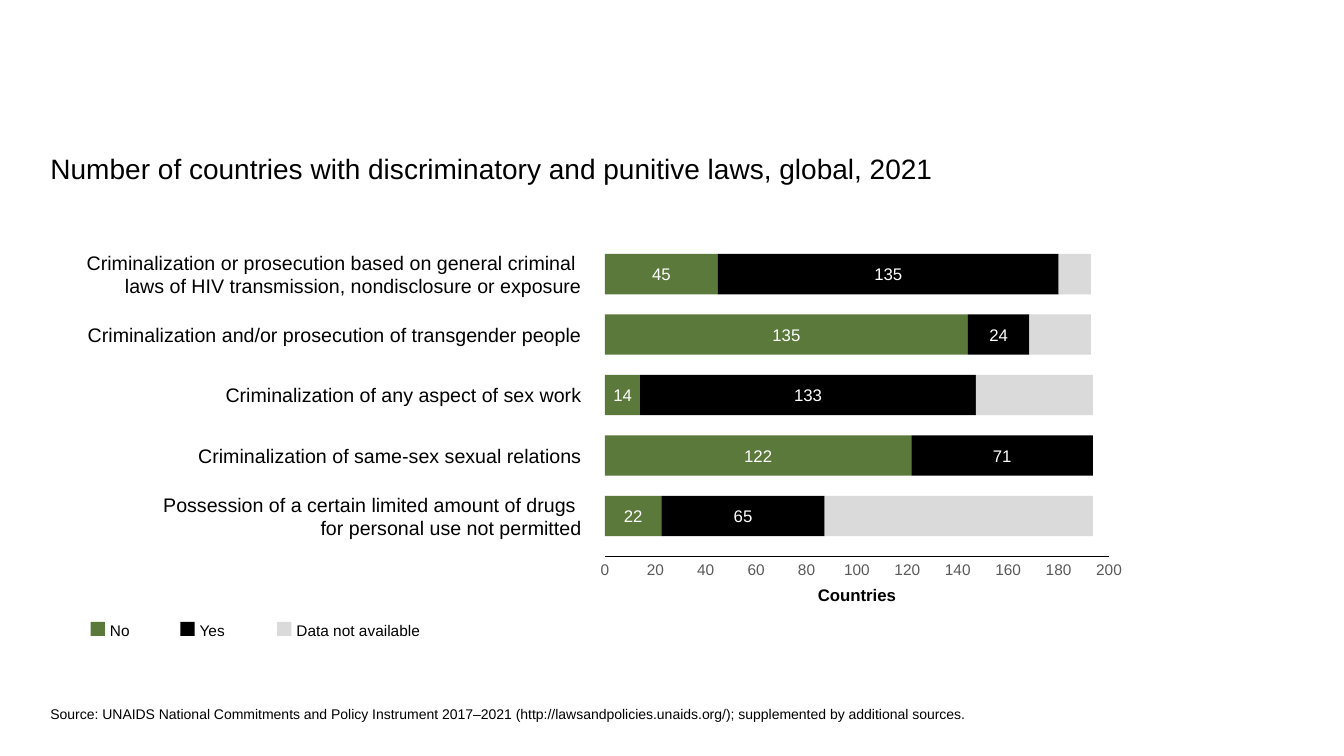
from lxml import etree
from pptx import Presentation
from pptx.dml.color import RGBColor
from pptx.enum.shapes import MSO_CONNECTOR as Connector, MSO_SHAPE as Shape
from pptx.enum.text import MSO_ANCHOR as Anchor, MSO_AUTO_SIZE as AutoSize, PP_ALIGN as Align
from pptx.oxml.ns import qn
from pptx.util import Pt

GREEN = RGBColor(0x5B, 0x79, 0x3B)
BLACK = RGBColor(0x00, 0x00, 0x00)
LIGHT_GREY = RGBColor(0xDA, 0xDA, 0xDA)
TICK_GREY = RGBColor(0x59, 0x59, 0x59)
WHITE = RGBColor(0xFF, 0xFF, 0xFF)

TITLE = "Number of countries with discriminatory and punitive laws, global, 2021"
SOURCE = ("Source: UNAIDS National Commitments and Policy Instrument 2017–2021 "
          "(http://lawsandpolicies.unaids.org/); supplemented by additional sources.")
AXIS_TITLE = "Countries"

# Category, then (value shown, bar length in px) for No, Yes and Data not available
ROWS = [
    ("Criminalization or prosecution based on general criminal \n"
     "laws of HIV transmission, nondisclosure or exposure",
     [("45", 112), ("135", 338), ("", 32)]),
    ("Criminalization and/or prosecution of transgender people",
     [("135", 360), ("24", 61), ("", 61)]),
    ("Criminalization of any aspect of sex work",
     [("14", 35), ("133", 333), ("", 116)]),
    ("Criminalization of same-sex sexual relations",
     [("122", 304), ("71", 180)]),
    ("Possession of a certain limited amount of drugs \n"
     "for personal use not permitted",
     [("22", 56), ("65", 162), ("", 266)]),
]
SERIES_COLORS = [GREEN, BLACK, LIGHT_GREY]
LEGEND = [("No", 90), ("Yes", 179), ("Data not available", 275)]

PX = 9144  # 100 px to the inch
BAR_LEFT, BAR_TOP, BAR_HEIGHT, ROW_STEP = 600, 252, 40, 60
LABEL_LEFT, LABEL_RIGHT = 80, 577
AXIS_Y, AXIS_LENGTH, TICK_STEP, TICK_MAX = 552, 500, 20, 200
LEGEND_TOP, SWATCH = 617, 14


def px(*lengths):
    return [length * PX for length in lengths]


def write(shape, text, size, color=BLACK, align=Align.LEFT, anchor=Anchor.TOP,
          bold=False, spacing=None, wrap=True):
    frame = shape.text_frame
    frame.text = text
    frame_format = {"margin_left": 0, "margin_top": 0, "margin_right": 0, "margin_bottom": 0,
                    "word_wrap": wrap, "auto_size": AutoSize.NONE, "vertical_anchor": anchor}
    for name, value in frame_format.items():
        setattr(frame, name, value)
    font_format = {"name": "Arial", "size": Pt(size), "bold": bold}
    for paragraph in frame.paragraphs:
        paragraph.alignment = align
        if spacing:
            paragraph.line_spacing = Pt(spacing)
        for run in paragraph.runs:
            for name, value in font_format.items():
                setattr(run.font, name, value)
            run.font.color.rgb = color


def add_text(slide, box, text, size, **options):
    write(slide.shapes.add_textbox(*px(*box)), text, size, **options)


def add_block(slide, box, color):
    block = slide.shapes.add_shape(Shape.RECTANGLE, *px(*box))
    block.shadow.inherit = False
    block.fill.solid()
    block.fill.fore_color.rgb = color
    block.line.fill.background()
    return block


def add_rows(slide):
    for index, (category, segments) in enumerate(ROWS):
        top = BAR_TOP + index * ROW_STEP
        add_text(slide, (LABEL_LEFT, top, LABEL_RIGHT - LABEL_LEFT, BAR_HEIGHT), category, 14,
                 align=Align.RIGHT, anchor=Anchor.MIDDLE)
        left = BAR_LEFT
        for (value, length), color in zip(segments, SERIES_COLORS):
            bar = add_block(slide, (left, top, length, BAR_HEIGHT), color)
            if value:
                write(bar, value, 12, color=WHITE, align=Align.CENTER, anchor=Anchor.MIDDLE)
            left += length


def add_axis(slide):
    axis = slide.shapes.add_connector(
        Connector.STRAIGHT, *px(BAR_LEFT, AXIS_Y, BAR_LEFT + AXIS_LENGTH, AXIS_Y))
    axis.line.color.rgb = BLACK
    axis.line.width = Pt(0.75)
    etree.SubElement(axis.line._ln.getparent(), qn("a:effectLst"))

    tick_width = AXIS_LENGTH * TICK_STEP // TICK_MAX
    for value in range(0, TICK_MAX + 1, TICK_STEP):
        center = BAR_LEFT + AXIS_LENGTH * value // TICK_MAX
        add_text(slide, (center - tick_width // 2, AXIS_Y + 7, tick_width, 15), str(value), 11,
                 color=TICK_GREY, align=Align.CENTER, spacing=11)
    add_text(slide, (BAR_LEFT, AXIS_Y + 28, AXIS_LENGTH, 20), AXIS_TITLE, 12,
             align=Align.CENTER, bold=True)


def add_legend(slide):
    for (name, left), color in zip(LEGEND, SERIES_COLORS):
        add_block(slide, (left, LEGEND_TOP, SWATCH, SWATCH), color)
        add_text(slide, (left + 19, LEGEND_TOP - 2, 124, 18), name, 11, spacing=14, wrap=False)


def main():
    presentation = Presentation()
    presentation.slide_width, presentation.slide_height = px(1333, 750)
    slide = presentation.slides.add_slide(presentation.slide_layouts.get_by_name("Title Only"))

    title = slide.shapes.title
    title.left, title.top, title.width, title.height = px(50, 150, 1250, 40)
    write(title, TITLE, 20)

    add_rows(slide)
    add_axis(slide)
    add_legend(slide)
    add_text(slide, (50, 700, 914, 17), SOURCE, 10, wrap=False)
    presentation.save("out.pptx")


if __name__ == "__main__":
    main()
